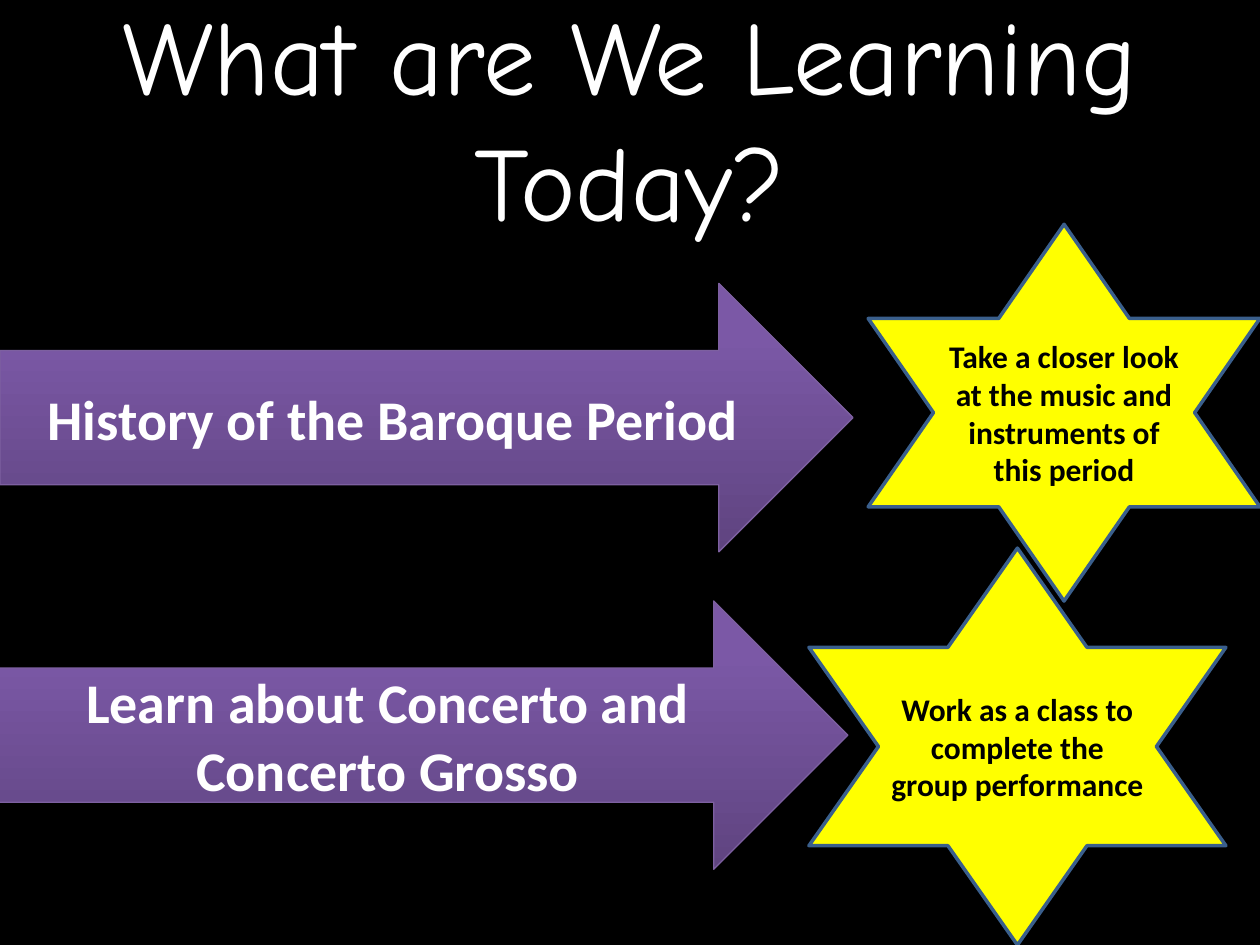
from copy import deepcopy
from dataclasses import dataclass

from pptx import Presentation
from pptx.dml.color import RGBColor
from pptx.enum.shapes import MSO_SHAPE
from pptx.enum.text import MSO_ANCHOR, PP_ALIGN
from pptx.oxml.ns import qn
from pptx.util import Inches, Pt

ARROW = MSO_SHAPE.RIGHT_ARROW
STAR = MSO_SHAPE.STAR_6_POINT
CENTER = PP_ALIGN.CENTER
MIDDLE = MSO_ANCHOR.MIDDLE


@dataclass(frozen=True)
class Theme:
    background: str = "000000"
    light_text: str = "FFFFFF"
    dark_text: str = "000000"
    arrow_stops: tuple = ((0, "5F4480"), (0.8, "7B58A6"), (1, "7C57A8"))
    arrow_line: str = "7D60A0"
    star_fill: str = "FFFF00"
    star_line: str = "3A5F8C"
    title_font: str = "Comic Neue"
    body_font: str = "Calibri"
    title_size: int = 60
    arrow_size: int = 32
    star_size: int = 18


class SlideBuilder:
    def __init__(self, slide, theme):
        self.slide = slide
        self.theme = theme
        fill = slide.background.fill
        fill.solid()
        fill.fore_color.rgb = RGBColor.from_string(theme.background)

    def add_text(self, shape, text, color, **font_values):
        frame = shape.text_frame
        frame.word_wrap = True
        frame.vertical_anchor = MIDDLE
        paragraph = frame.paragraphs[0]
        paragraph.alignment = CENTER
        run = paragraph.add_run()
        run.text = text
        for name, value in font_values.items():
            setattr(run.font, name, value)
        run.font.color.rgb = RGBColor.from_string(color)

    def outlined_shape(self, kind, box, line_color, line_width):
        shape = self.slide.shapes.add_shape(kind, *map(Inches, box))
        shape.shadow.inherit = False
        shape.line.color.rgb = RGBColor.from_string(line_color)
        shape.line.width = Pt(line_width)
        return shape

    def title(self, box, text):
        shape = self.slide.shapes.add_textbox(*map(Inches, box))
        self.add_text(shape, text, self.theme.light_text,
                      name=self.theme.title_font, size=Pt(self.theme.title_size))

    def arrow(self, box, text):
        theme = self.theme
        shape = self.outlined_shape(ARROW, box, theme.arrow_line, 0.75)
        shape.fill.gradient()
        shape.fill.gradient_angle = 90
        # A new gradient has two stops; a third is needed
        stop_list = shape.element.spPr.find(".//" + qn("a:gsLst"))
        stop_list.append(deepcopy(stop_list[-1]))
        for stop, (position, color) in zip(shape.fill.gradient_stops, theme.arrow_stops):
            stop.position = position
            stop.color.rgb = RGBColor.from_string(color)
        self.add_text(shape, text, theme.light_text, name=theme.body_font,
                      size=Pt(theme.arrow_size), bold=True)

    def star(self, box, text):
        theme = self.theme
        shape = self.outlined_shape(STAR, box, theme.star_line, 2)
        shape.fill.solid()
        shape.fill.fore_color.rgb = RGBColor.from_string(theme.star_fill)
        self.add_text(shape, text, theme.dark_text, name=theme.body_font,
                      size=Pt(theme.star_size), bold=True)


def main():
    presentation = Presentation()
    presentation.slide_width = Inches(10)
    presentation.slide_height = Inches(7.5)
    slide = presentation.slides.add_slide(presentation.slide_layouts[6])
    builder = SlideBuilder(slide, Theme())

    # Heading
    builder.title((0.5, 0.3, 9, 1.25), "What are We Learning Today?")

    # Each topic arrow points to its activity star
    builder.arrow((0, 2.25, 6.77, 2.13), "History of the Baroque Period")
    builder.star((6.89, 1.78, 3.11, 2.99),
                 "Take a closer look at the music and instruments of this period")
    builder.arrow((-0.04, 4.77, 6.77, 2.13), "Learn about Concerto and Concerto Grosso")
    builder.star((6.42, 4.35, 3.31, 3.15),
                 "Work as a class to complete the group performance")

    presentation.save("out.pptx")


if __name__ == "__main__":
    main()
